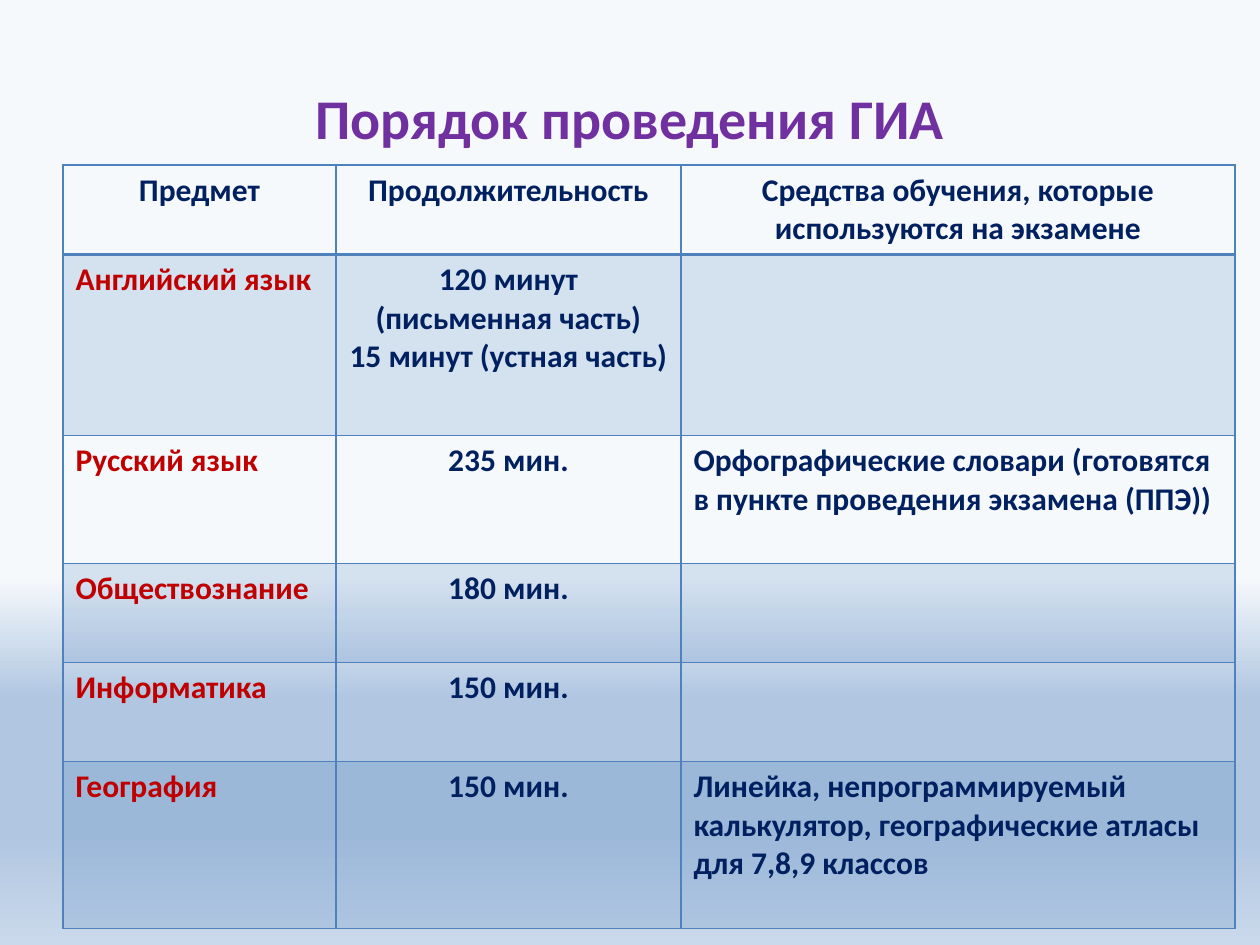
from dataclasses import dataclass

from lxml.etree import SubElement
from pptx import Presentation
from pptx.dml.color import RGBColor
from pptx.enum.text import MSO_ANCHOR, PP_ALIGN
from pptx.oxml.ns import qn
from pptx.util import Emu, Inches, Pt

NAVY = RGBColor(0x00, 0x20, 0x60)
RED = RGBColor(0xC0, 0x00, 0x00)
PURPLE = RGBColor(0x70, 0x30, 0xA0)
BLUE = RGBColor(0x4F, 0x81, 0xBD)
PALE = RGBColor(0xF6, 0xF9, 0xFC)
MIST = RGBColor(0xB0, 0xC6, 0xE1)
SKY = RGBColor(0xCA, 0xD9, 0xEB)

SCALE = Inches(1) / 126
STOPS = ((61, PALE), (74, MIST), (88, MIST), (100, SKY))
COLS = (273, 345, 554)
HEADS = ("Предмет", "Продолжительность",
         "Средства обучения, которые используются на экзамене")
HEAD_H = 89


@dataclass(frozen=True)
class Exam:
    """One subject row of the table."""
    name: str
    time: str
    tools: str
    height: int


EXAMS = (
    Exam("Английский язык",
         "120 минут (письменная часть)\n15 минут (устная часть)", "", 181),
    Exam("Русский язык", "235 мин.",
         "Орфографические словари (готовятся в пункте проведения экзамена (ППЭ))",
         128),
    Exam("Обществознание", "180 мин.", "", 99),
    Exam("Информатика", "150 мин.", "", 99),
    Exam("География", "150 мин.",
         "Линейка, непрограммируемый калькулятор, "
         "географические атласы для 7,8,9 классов", 167),
)


def px(num: int) -> Emu:
    """Turn pixels into EMU."""
    return Emu(round(num * SCALE))


def write(frame, text: str, *, size: int = 18, color: RGBColor = NAVY,
          align: PP_ALIGN = PP_ALIGN.LEFT) -> None:
    """Put formatted bold text into a frame."""
    frame.text = text
    for para in frame.paragraphs:
        para.alignment = align
        for run in para.runs:
            font = run.font
            font.name, font.size, font.bold = "Calibri", Pt(size), True
            font.color.rgb = color


def tint(parent, color: RGBColor):
    """Add an RGB colour element."""
    return SubElement(parent, qn("a:srgbClr"), val=str(color))


def shade(slide) -> None:
    """Give the slide its downward gradient."""
    fill = slide.background.fill
    fill.gradient()
    fill.gradient_angle = 270
    stops = next(slide.element.iter(qn("a:gsLst")))
    for old in list(stops):
        stops.remove(old)
    for pos, color in STOPS:
        tint(SubElement(stops, qn("a:gs"), pos=str(pos * 1000)), color)


def frame_cell(cell, top: int, bottom: int) -> None:
    """Draw the four borders of a cell."""
    props = cell._tc.get_or_add_tcPr()
    for side, width in (("L", 1), ("R", 1), ("T", top), ("B", bottom)):
        line = SubElement(props, qn(f"a:ln{side}"), w=str(Pt(width)))
        tint(SubElement(line, qn("a:solidFill")), BLUE)


def fill_cell(cell, band: bool) -> None:
    """Fill a banded cell at 20% opacity or leave it clear."""
    if not band:
        cell.fill.background()
        return
    cell.fill.solid()
    cell.fill.fore_color.rgb = BLUE
    color = next(cell._tc.tcPr.find(qn("a:solidFill")).iter(qn("a:srgbClr")))
    SubElement(color, qn("a:alpha"), val="20000")


def add_exams(slide) -> None:
    """Add the exam table."""
    rows = [HEADS] + [(e.name, e.time, e.tools) for e in EXAMS]
    highs = [HEAD_H] + [e.height for e in EXAMS]
    table = slide.shapes.add_table(
        len(rows), len(COLS), px(63), px(165), px(sum(COLS)), px(sum(highs))).table
    table.first_row = table.horz_banding = False
    for col, width in zip(table.columns, COLS):
        col.width = px(width)
    for r, (texts, high) in enumerate(zip(rows, highs)):
        table.rows[r].height = px(high)
        for c, text in enumerate(texts):
            cell = table.cell(r, c)
            mid = r == 0 or c == 1
            write(cell.text_frame, text, color=RED if r and c == 0 else NAVY,
                  align=PP_ALIGN.CENTER if mid else PP_ALIGN.LEFT)
            frame_cell(cell, 2 if r == 1 else 1, 2 if r == 0 else 1)
            fill_cell(cell, r % 2 == 1)


def main() -> None:
    """Build and save the slide."""
    deck = Presentation()
    deck.slide_width, deck.slide_height = px(1260), px(945)
    slide = deck.slides.add_slide(deck.slide_layouts[5])
    shade(slide)
    title = slide.shapes.title
    title.left, title.top, title.width, title.height = map(px, (63, 38, 1134, 158))
    title.text_frame.vertical_anchor = MSO_ANCHOR.MIDDLE
    write(title.text_frame, "Порядок проведения ГИА", size=32, color=PURPLE,
          align=PP_ALIGN.CENTER)
    add_exams(slide)
    deck.save("out.pptx")


if __name__ == "__main__":
    main()
